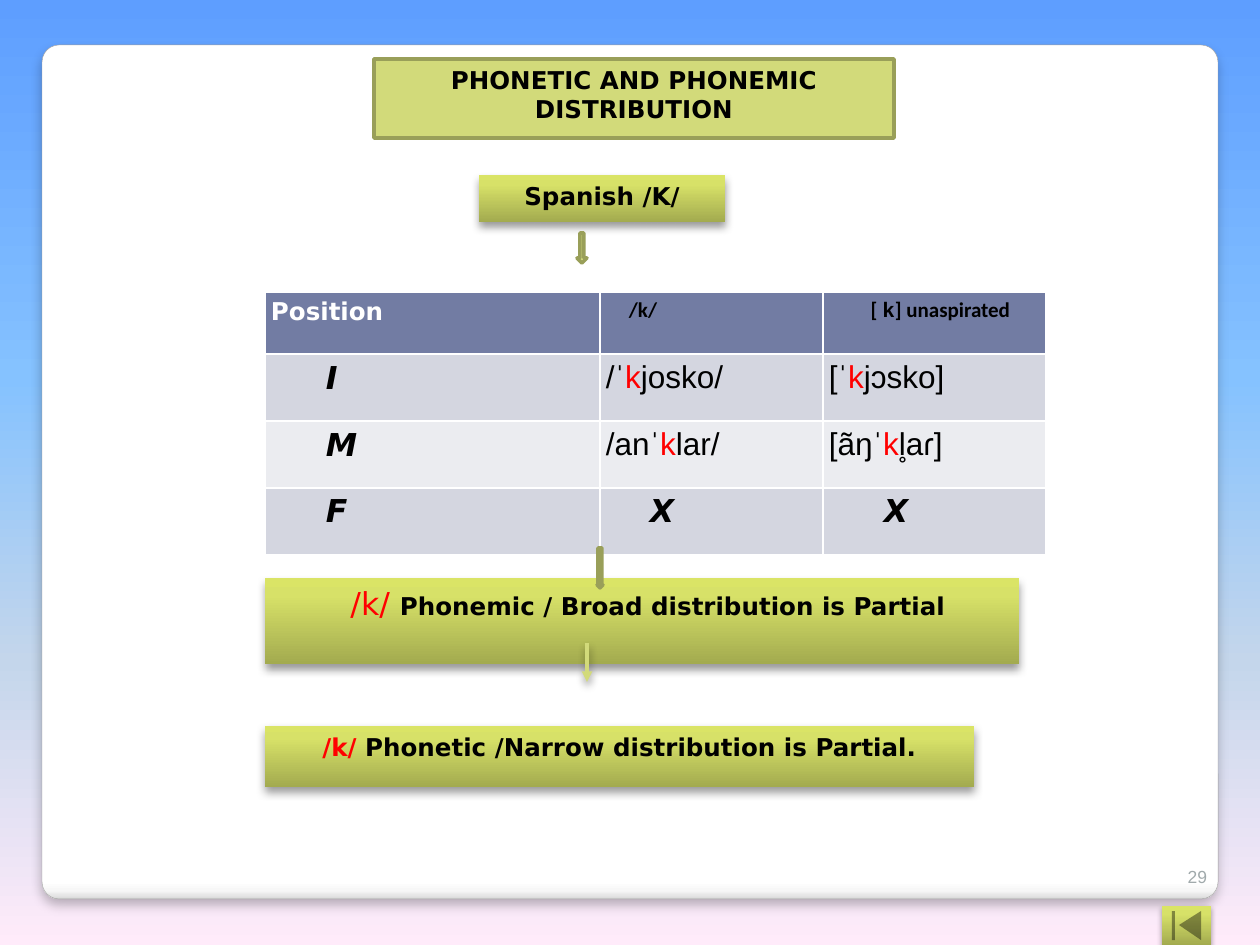
from lxml import etree
from pptx import Presentation
from pptx.dml.color import RGBColor
from pptx.enum.shapes import MSO_CONNECTOR, MSO_SHAPE
from pptx.enum.text import MSO_ANCHOR, MSO_AUTO_SIZE, PP_ALIGN
from pptx.oxml.ns import qn
from pptx.util import Pt

PX = 914400 / 126
RECT, ROUND = MSO_SHAPE.RECTANGLE, MSO_SHAPE.ROUNDED_RECTANGLE
LEFT, MID, RIGHT = PP_ALIGN.LEFT, PP_ALIGN.CENTER, PP_ALIGN.RIGHT
TOP, BOTTOM = MSO_ANCHOR.TOP, MSO_ANCHOR.BOTTOM
PAD = 6

HEX = {
    "black": "000000", "white": "FFFFFF", "red": "FF0000",
    "lime": "D2DA7A", "olive": "999F59", "edge": "A2A1A1",
    "gray": "A1AAAC", "head": "727CA3", "band": "D4D6E0", "pale": "EBECF0",
}
SKY = [(0, "5E9EFF"), (40, "85C2FF"), (70, "C4D6EB"), (100, "FFEBFA")]
CARD = [(0, "FFFFFF"), (98, "FFFFFF"), (99, "F7F7F7"), (100, "D9D9D9")]
GLOW = [(0, "A3AB4F"), (80, "D7E168"), (100, "DAE466")]

# Text formats
BASE = {"name": "DejaVu Sans", "size": Pt(14), "bold": True,
        "italic": False, "color": "black"}
HEAD = {**BASE, "color": "white"}
NOTE = {**BASE, "name": "Calibri", "size": Pt(12)}
MONO = {**NOTE, "name": "Courier New"}
MARK = {**BASE, "size": Pt(18), "italic": True}
SOUND = {**BASE, "name": "Arial", "size": Pt(18), "bold": False}
KEY = {**SOUND, "color": "red"}
PAGE = {**SOUND, "size": Pt(10), "color": "gray"}


def px(num):
    return round(num * PX)


def rgb(key):
    return RGBColor.from_string(HEX[key])


def add(node, tag, **attrs):
    return etree.SubElement(node, qn(tag), attrs)


def blend(fill, root, stops, angle):
    """Gradient with any number of stops; angle runs clockwise."""
    fill.gradient()
    fill.gradient_angle = 360 - angle
    items = root.find(".//" + qn("a:gsLst"))
    for old in list(items):
        items.remove(old)
    for spot, color in stops:
        stop = add(items, "a:gs", pos=str(spot * 1000))
        add(stop, "a:srgbClr", val=color)


def shade(effects, alpha, blur, dist):
    drop = add(effects, "a:outerShdw", blurRad=str(Pt(blur)),
               dist=str(Pt(dist)), dir="5400000", rotWithShape="0")
    color = add(drop, "a:srgbClr", val=HEX["black"])
    add(color, "a:alpha", val=str(alpha * 1000))


def write(frame, runs, align=MID, left=PAD, anchor=TOP):
    frame.word_wrap = True
    frame.auto_size = MSO_AUTO_SIZE.NONE
    frame.vertical_anchor = anchor
    frame.margin_left = px(left)
    frame.margin_top = frame.margin_right = frame.margin_bottom = px(PAD)
    fill_text(frame.paragraphs[0], runs, align)


def fill_text(para, runs, align):
    para.alignment = align
    for words, form in runs:
        run = para.add_run()
        run.text = words
        for name, value in form.items():
            if name == "color":
                run.font.color.rgb = rgb(value)
            else:
                setattr(run.font, name, value)


def panel(slide, box, stops, angle, drop, kind=RECT):
    shape = slide.shapes.add_shape(kind, *map(px, box))
    blend(shape.fill, shape._element.spPr, stops, angle)
    shape.line.fill.background()
    shape.shadow.inherit = False
    shade(shape._element.spPr.find(qn("a:effectLst")), *drop)
    return shape


def label(slide, box, runs, left=PAD):
    shape = panel(slide, box, GLOW, 270, (40, 5, 3))
    write(shape.text_frame, runs, left=left)


def outline(slide, paths, color):
    first, *others = paths
    pen = slide.shapes.build_freeform(*first[0], scale=PX)
    pen.add_line_segments(first[1:], close=True)
    for points in others:
        pen.move_to(*points[0])
        pen.add_line_segments(points[1:], close=True)
    shape = pen.convert_to_shape()
    shape.fill.solid()
    shape.fill.fore_color.rgb = rgb(color)
    shape.line.fill.background()
    shape.shadow.inherit = False
    return shape


def arrow(slide, mid, top, neck, tip, stem, wing):
    """Down arrow; stem and wing are half widths."""
    half = [(mid - wing, neck), (mid - stem, neck), (mid - stem, top)]
    back = [(2 * mid - x, y) for x, y in reversed(half)]
    shape = outline(slide, [half + back + [(mid, tip)]], "lime")
    shape.line.color.rgb = rgb("olive")
    shape.line.width = Pt(2)


def link(slide, x, top, end):
    line = slide.shapes.add_connector(
        MSO_CONNECTOR.STRAIGHT, px(x), px(top), px(x), px(end))
    line.line.color.rgb = rgb("lime")
    line.line.width = Pt(2)
    add(line.line._get_or_add_ln(), "a:tailEnd", type="triangle")
    shade(add(line._element.spPr, "a:effectLst"), 40, 5, 3)


def grid(slide, box, widths, heights, rows):
    table = slide.shapes.add_table(
        len(rows), len(widths), *map(px, box)).table
    for col, width in zip(table.columns, widths):
        col.width = px(width)
    for i, (row, height) in enumerate(zip(rows, heights)):
        table.rows[i].height = px(height)
        tint = "head" if i == 0 else "band" if i % 2 else "pale"
        for j, (runs, align, left) in enumerate(row):
            cell = table.cell(i, j)
            cell.fill.solid()
            cell.fill.fore_color.rgb = rgb(tint)
            cell.margin_left = px(left)
            cell.margin_top = cell.margin_right = cell.margin_bottom = px(PAD)
            fill_text(cell.text_frame.paragraphs[0], runs, align)


def mark(text, left=61):
    return [(text, MARK)], LEFT, left


def sound(start, end):
    return [(start, SOUND), ("k", KEY), (end, SOUND)], LEFT, PAD


def heading(slide):
    title = slide.shapes.title
    title.left, title.top, title.width, title.height = map(
        px, (374, 59, 520, 79))
    title.fill.solid()
    title.fill.fore_color.rgb = rgb("lime")
    title.line.color.rgb = rgb("olive")
    title.line.width = Pt(2)
    write(title.text_frame, [("PHONETIC AND PHONEMIC DISTRIBUTION", BASE)])


def button(slide):
    panel(slide, (1162, 906, 49, 39), GLOW, 270, (35, 3, 1.8))
    back = [(1179, 925), (1201, 911), (1201, 940)]
    bar = [(1175, 911), (1172, 911), (1172, 940), (1175, 940)]
    icon = outline(slide, [back, bar], "black")
    color = icon._element.spPr.find(qn("a:solidFill"))[0]
    add(color, "a:alpha", val="40000")


def main():
    deck = Presentation()
    deck.slide_width, deck.slide_height = px(1260), px(945)
    slide = deck.slides.add_slide(deck.slide_layouts[5])
    blend(slide.background.fill, slide._element, SKY, 90)

    # White card, behind the title
    card = panel(slide, (42, 45, 1176, 854), CARD, 90, (25, 6, 4), ROUND)
    card.adjustments[0] = 0.02
    card.line.color.rgb = rgb("edge")
    card.line.width = Pt(0.25)
    slide.shapes._spTree.insert(2, card._element)

    heading(slide)
    label(slide, (479, 175, 246, 47), [("Spanish /K/", BASE)])

    # Distribution by position
    rows = [
        [([("Position", HEAD)], LEFT, PAD),
         ([("/k/", NOTE)], LEFT, 29),
         ([("[ ", NOTE), ("k", MONO), ("] unaspirated", NOTE)], MID, 18)],
        [mark("I"), sound("/ˈ", "josko/"), sound("[ˈ", "jɔsko]")],
        [mark("M"), sound("/anˈ", "lar/"), sound("[ãŋˈ", "l̥aɾ]")],
        [mark("F"), mark("X", 50), mark("X")],
    ]
    grid(slide, (265, 292, 781, 263), (335, 223, 223), (62, 67, 67, 67), rows)

    # Findings
    label(slide, (265, 578, 754, 86),
          [("/k/ ", {**KEY, "name": "DejaVu Sans"}),
           ("Phonemic / Broad distribution is Partial", BASE)], left=18)
    label(slide, (265, 726, 709, 61),
          [("/k/ ", {**BASE, "color": "red"}),
           ("Phonetic /Narrow distribution is Partial.", BASE)])

    # Arrows
    arrow(slide, 582, 233, 258, 263, 2, 5)
    arrow(slide, 600, 548, 585, 588, 2, 3)
    link(slide, 587, 643, 682)

    # Button and page number
    button(slide)
    page = slide.shapes.add_textbox(*map(px, (1150, 862, 63, 31)))
    write(page.text_frame, [("29", PAGE)], RIGHT, anchor=BOTTOM)
    deck.save("out.pptx")


if __name__ == "__main__":
    main()
